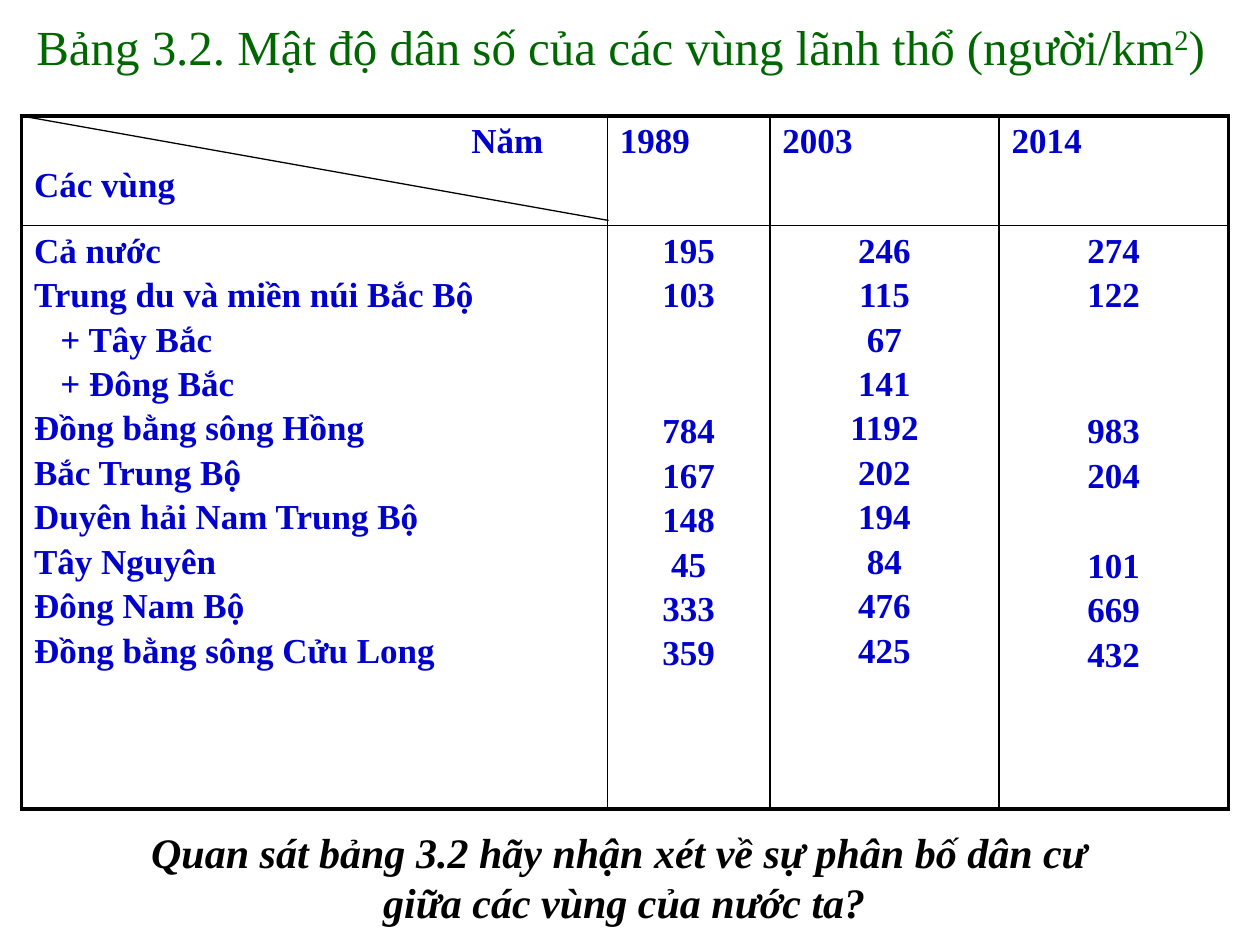
"""Build a slide with a table of population density by region."""
from lxml.etree import SubElement as Sub
from pptx import Presentation
from pptx.dml.color import RGBColor
from pptx.enum.shapes import MSO_CONNECTOR as Link
from pptx.enum.text import MSO_AUTO_SIZE as Fit, PP_ALIGN as Align
from pptx.oxml.ns import qn
from pptx.util import Inches, Pt

GREEN = RGBColor(0x00, 0x66, 0x00)
BLUE = RGBColor(0x00, 0x00, 0xCC)
BLACK = RGBColor(0x00, 0x00, 0x00)
FACE = "Times New Roman"
PITCH, GAP = 26.2, 3.2

deck = Presentation()
deck.slide_width, deck.slide_height = Inches(10), Inches(7.5)
wide, high = deck.slide_width, deck.slide_height
slide = deck.slides.add_slide(deck.slide_layouts[6])


def style(para, size, color, bold=False, indent=0):
    font = para.font
    font.name, font.size, font.bold = FACE, Pt(size), bold
    font.color.rgb = color
    if indent:
        props = para._p.get_or_add_pPr()
        props.set("marL", str(int(wide * indent)))
        props.set("indent", "0")


def add_box(left, top, width, height):
    box = slide.shapes.add_textbox(
        int(wide * left), int(high * top), int(wide * width), int(high * height))
    frame = box.text_frame
    frame.word_wrap, frame.auto_size = True, Fit.SHAPE_TO_FIT_TEXT
    return frame


title = add_box(0, 0.0107, 0.98, 0.076).paragraphs[0]
style(title, 28, GREEN, indent=0.019)
for text, base in (("Bảng 3.2. Mật độ dân số của các vùng lãnh thổ (người/km", 0),
                   ("2", 30000), (")", 0)):
    run = title.add_run()
    run.text = text
    if base:
        run._r.get_or_add_rPr().set("baseline", str(base))

heads = [["Năm", "Các vùng"], ["1989"], ["2003"], ["2014"]]
areas = [
    ("Cả nước", 195, 246, 274),
    ("Trung du và miền núi Bắc Bộ", 103, 115, 122),
    ("+ Tây Bắc", None, 67, None),
    ("+ Đông Bắc", None, 141, None),
    ("Đồng bằng sông Hồng", 784, 1192, 983),
    ("Bắc Trung Bộ", 167, 202, 204),
    ("Duyên hải Nam Trung Bộ", 148, 194, None),
    ("Tây Nguyên", 45, 84, 101),
    ("Đông Nam Bộ", 333, 476, 669),
    ("Đồng bằng sông Cửu Long", 359, 425, 432),
]
cols = [0.465, 0.129, 0.182, 0.182]
rows = [0.116, 0.6173]
left, top = int(wide * 0.017), int(high * 0.1227)
table = slide.shapes.add_table(
    2, 4, left, top, int(wide * sum(cols)), int(high * sum(rows))).table
table.first_row = table.horz_banding = False
for col, share in zip(table.columns, cols):
    col.width = int(wide * share)
for row, share in zip(table.rows, rows):
    row.height = int(high * share)

for r, group in enumerate((heads, list(zip(*areas)))):
    for c, items in enumerate(group):
        cell = table.cell(r, c)
        props = cell._tc.get_or_add_tcPr()
        sides = (("L", c == 0), ("R", c == 3), ("T", r == 0), ("B", r == 1))
        for side, outer in sides:
            line = Sub(props, qn("a:ln" + side), w=str(Pt(2.25 if outer else 1)))
            fill = Sub(line, qn("a:solidFill"))
            Sub(fill, qn("a:srgbClr"), val=str(BLACK))
        cell.fill.background()
        frame, last = cell.text_frame, None
        for i, item in enumerate(items):
            if item is None:
                continue
            para = frame.paragraphs[0] if last is None else frame.add_paragraph()
            para.text = str(item)
            indent = 0.347 if item == "Năm" else 0.021 if para.text[0] == "+" else 0
            style(para, 20, BLUE, True, indent)
            para.alignment = Align.CENTER if r and c else Align.LEFT
            if last is not None:
                para.space_before = Pt(GAP + PITCH * (i - last - 1))
            last = i

slash = slide.shapes.add_connector(
    Link.STRAIGHT, left, top, int(wide * 0.483), int(high * 0.2333))
slash.line.color.rgb, slash.line.width = BLACK, Pt(0.75)
Sub(slash._element.spPr, qn("a:effectLst"))

task = add_box(0.008, 0.868, 0.975, 0.1213)
task.text = ("Quan sát bảng 3.2 hãy nhận xét về sự phân bố dân cư \n"
             "giữa các vùng của nước ta?")
for para in task.paragraphs:
    style(para, 24, BLACK, True)
    para.font.italic = True
    para.alignment = Align.CENTER

deck.save("out.pptx")
